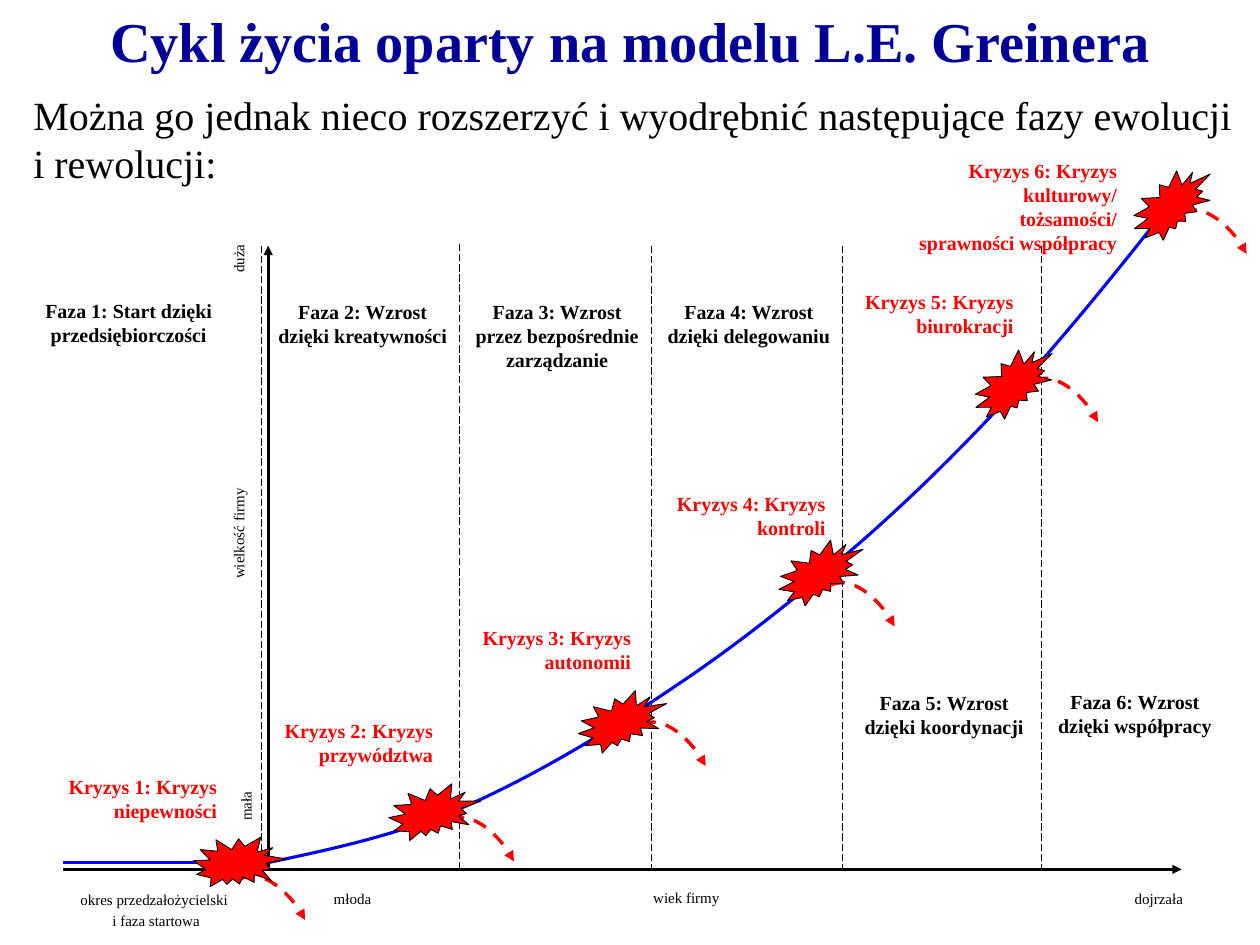
from lxml.etree import SubElement
from pptx import Presentation
from pptx.dml.color import RGBColor
from pptx.enum.dml import MSO_LINE
from pptx.enum.shapes import MSO_CONNECTOR, MSO_SHAPE
from pptx.enum.text import MSO_ANCHOR, MSO_AUTO_SIZE, PP_ALIGN
from pptx.oxml.ns import qn
from pptx.util import Inches, Pt

BLACK, RED, BLUE, NAVY = "000000", "FF0000", "0000FF", "000099"


def write_text(shape, lines, size, colour, bold=False, alignment=PP_ALIGN.LEFT, wrap=True):
    frame = shape.text_frame
    frame.word_wrap = wrap
    frame.vertical_anchor = MSO_ANCHOR.TOP
    frame.auto_size = MSO_AUTO_SIZE.NONE if shape.is_placeholder else MSO_AUTO_SIZE.SHAPE_TO_FIT_TEXT
    font_values = {"name": "Times New Roman", "size": Pt(size), "bold": bold}
    for index, line in enumerate(lines):
        paragraph = frame.add_paragraph() if index else frame.paragraphs[0]
        paragraph.text = line
        paragraph.alignment = alignment
        paragraph.space_before = Pt(0.2 * size if index else 0)
        properties = paragraph._p.get_or_add_pPr()
        properties.set("marL", "0")
        properties.set("indent", "0")
        SubElement(properties, qn("a:buNone"))
        for font in [paragraph.font] + [run.font for run in paragraph.runs]:
            for name, value in font_values.items():
                setattr(font, name, value)
            font.color.rgb = RGBColor.from_string(colour)


def style_line(shape, colour, width, dash=None, arrow=False):
    shape.line.color.rgb = RGBColor.from_string(colour)
    shape.line.width = Pt(width)
    if dash:
        shape.line.dash_style = dash
    if arrow:
        SubElement(shape.line._get_or_add_ln(), qn("a:tailEnd"), type="triangle")
    SubElement(shape._element.spPr, qn("a:effectLst"))


presentation = Presentation()
presentation.slide_width = Inches(14)
presentation.slide_height = Inches(10.5)
slide = presentation.slides.add_slide(presentation.slide_layouts[1])
shapes = slide.shapes

headings = [
    (shapes.title, (0.07, 0, 13.86, 0.9), "Cykl życia oparty na modelu L.E. Greinera",
     45, NAVY, True, PP_ALIGN.CENTER),
    (slide.placeholders[1], (0.23, 0.94, 13.62, 1.39),
     "Można go jednak nieco rozszerzyć i wyodrębnić następujące fazy ewolucji i rewolucji:",
     32, BLACK, False, PP_ALIGN.LEFT),
]
for placeholder, box, text, size, colour, bold, alignment in headings:
    for name, value in zip(("left", "top", "width", "height"), box):
        setattr(placeholder, name, Inches(value))
    write_text(placeholder, [text], size, colour, bold, alignment)
    margins = {"margin_left": 0.14, "margin_right": 0.14, "margin_top": 0.07, "margin_bottom": 0.07}
    for name, value in margins.items():
        setattr(placeholder.text_frame, name, Inches(value))

straight_lines = [
    (2.98, 9.66, 2.98, 2.73, BLACK, 2.5, None, True),
    (0.7, 9.66, 13.13, 9.66, BLACK, 2.5, None, True),
    (0.7, 9.58, 2.97, 9.58, BLUE, 2.5, None, False),
]
for x in (2.91, 5.11, 7.24, 9.36, 11.57):
    top = 2.71 if x == 5.11 else 2.73
    straight_lines.append((x, top, x, top + 6.95, BLACK, 0.75, MSO_LINE.LONG_DASH, False))
for *ends, colour, width, dash, arrow in straight_lines:
    connector = shapes.add_connector(MSO_CONNECTOR.STRAIGHT, *[Inches(value) for value in ends])
    style_line(connector, colour, width, dash, arrow)

axis_labels = [
    (7.16, 9.82, 0.95, 0.3, ["wiek firmy"], PP_ALIGN.LEFT, False),
    (3.61, 9.83, 0.62, 0.3, ["młoda"], PP_ALIGN.LEFT, False),
    (12.51, 9.84, 0.75, 0.3, ["dojrzała"], PP_ALIGN.LEFT, False),
    (0.78, 9.85, 1.91, 0.55, ["okres przedzałożycielski ", "i faza startowa"], PP_ALIGN.CENTER, False),
    (2.5, 5.41, 0.4, 1.12, ["wielkość firmy"], PP_ALIGN.LEFT, True),
    (2.5, 2.71, 0.4, 0.42, ["duża"], PP_ALIGN.LEFT, True),
    (2.58, 8.79, 0.4, 0.43, ["mała"], PP_ALIGN.LEFT, True),
]
for *box, lines, alignment, vertical in axis_labels:
    label = shapes.add_textbox(*[Inches(value) for value in box])
    write_text(label, lines, 12, BLACK, False, alignment, wrap=False)
    if vertical:
        label.text_frame._txBody.bodyPr.set("vert", "vert270")

curve_points = [
    (3.71, 9.43), (4.41, 9.28), (5.17, 8.96),
    (5.92, 8.63), (6.76, 8.13), (7.51, 7.62),
    (8.26, 7.12), (9.01, 6.51), (9.67, 5.93),
    (10.32, 5.35), (10.86, 4.8), (11.43, 4.17),
    (12, 3.53), (12.55, 2.84), (13.1, 2.14),
]
builder = shapes.build_freeform(Inches(3), Inches(9.58))
builder.add_line_segments([(Inches(x), Inches(y)) for x, y in curve_points], close=False)
curve = builder.convert_to_shape()
segments = list(curve._element.iter(qn("a:lnTo")))
outline = segments[0].getparent()
for start in range(0, len(segments), 3):
    bezier = SubElement(outline, qn("a:cubicBezTo"))
    for segment in segments[start:start + 3]:
        bezier.append(segment[0])
        outline.remove(segment)
curve.fill.background()
style_line(curve, BLUE, 2.5)

phases = [
    (0.35, 3.27, 0.64, "Start dzięki przedsiębiorczości"),
    (2.95, 3.28, 0.64, "Wzrost dzięki kreatywności"),
    (5.11, 3.28, 0.91, "Wzrost przez bezpośrednie zarządzanie"),
    (7.24, 3.28, 0.64, "Wzrost dzięki delegowaniu"),
    (9.41, 7.62, 0.64, "Wzrost dzięki koordynacji"),
    (11.53, 7.61, 0.64, "Wzrost dzięki współpracy"),
]
for number, (left, top, height, text) in enumerate(phases, 1):
    label = shapes.add_textbox(Inches(left), Inches(top), Inches(2.16), Inches(height))
    write_text(label, [f"Faza {number}: {text}"], 16, BLACK, True, PP_ALIGN.CENTER)

crises = [
    (0.35, 8.56, 2.16, 0.64, "niepewności"),
    (2.75, 7.93, 2.16, 0.64, "przywództwa"),
    (4.95, 6.9, 2.16, 0.64, "autonomii"),
    (7.11, 5.41, 2.16, 0.64, "kontroli"),
    (9.2, 3.17, 2.16, 0.64, "biurokracji"),
    (10.07, 1.71, 2.44, 1.18, "kulturowy/\vtożsamości/\vsprawności współpracy"),
]
for number, (*box, text) in enumerate(crises, 1):
    label = shapes.add_textbox(*[Inches(value) for value in box])
    write_text(label, [f"Kryzys {number}: Kryzys {text}"], 16, RED, True, PP_ALIGN.RIGHT)

for left, top in [(2.59, 9.68), (4.91, 9.03), (7.04, 7.97), (9.14, 6.42), (11.4, 4.15), (13.05, 2.28)]:
    arc = shapes.add_shape(MSO_SHAPE.ARC, Inches(left), Inches(top), Inches(0.88), Inches(1.6))
    arc.adjustments[0] = 162
    arc.adjustments[1] = 209.91
    arc.rotation = 334.6
    arc.fill.background()
    style_line(arc, RED, 2.75, MSO_LINE.DASH, True)

bursts = [
    (2.15, 9.27, 9.1), (6.41, 7.7, 351.3), (4.32, 8.71, 0),
    (8.62, 6.04, 344.6), (10.77, 3.94, 334.9), (12.53, 1.95, 334.3),
]
for left, top, rotation in bursts:
    burst = shapes.add_shape(MSO_SHAPE.EXPLOSION2, Inches(left), Inches(top), Inches(1.02), Inches(0.63))
    burst.rotation = rotation
    burst.fill.solid()
    burst.fill.fore_color.rgb = RGBColor.from_string(RED)
    style_line(burst, BLACK, 0.75)

presentation.save("out.pptx")
